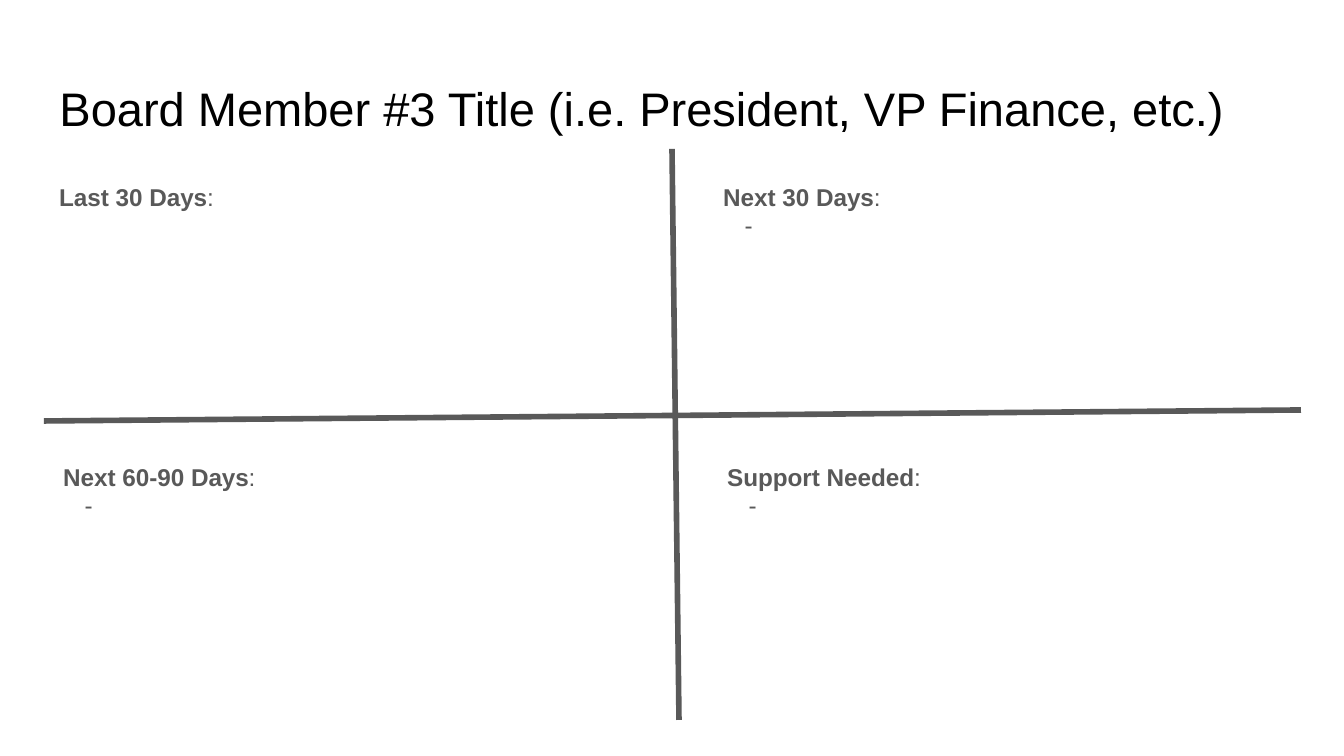
from lxml import etree
from pptx import Presentation
from pptx import util as u
from pptx.dml.color import RGBColor
from pptx.enum import shapes, text
from pptx.oxml.ns import qn

BLACK = RGBColor(0x00, 0x00, 0x00)
GREY = RGBColor(0x59, 0x59, 0x59)
FONT = "Arial"
EMU_PER_PX = 914400 / 134.4


def px(*lengths):
    return [u.Emu(round(length * EMU_PER_PX)) for length in lengths]


class Board:
    """Draws a quadrant report on one slide in a single style."""

    def __init__(self, deck):
        self.slide = deck.slides.add_slide(deck.slide_layouts[5])

    def frame(self, shape):
        frame = shape.text_frame
        frame.word_wrap = True
        frame.auto_size = text.MSO_AUTO_SIZE.NONE
        frame.vertical_anchor = text.MSO_ANCHOR.TOP
        frame.margin_left = frame.margin_right = u.Inches(0.1)
        frame.margin_top = frame.margin_bottom = u.Inches(0.1)
        return frame

    def run(self, paragraph, words, size, color, bold=False):
        run = paragraph.add_run()
        run.text = words
        run.font.name = FONT
        run.font.size = u.Pt(size)
        run.font.bold = bold
        run.font.color.rgb = color

    def title(self, words, *box):
        heading = self.slide.shapes.title
        heading.left, heading.top, heading.width, heading.height = px(*box)
        paragraph = self.frame(heading).paragraphs[0]
        paragraph.alignment = text.PP_ALIGN.LEFT
        self.run(paragraph, words, 25.2, BLACK)

    def dash(self, paragraph):
        properties = paragraph._p.get_or_add_pPr()
        properties.set("marL", str(u.Inches(0.5)))
        properties.set("indent", str(u.Inches(-0.34)))
        tint = etree.SubElement(properties, qn("a:buClr"))
        etree.SubElement(tint, qn("a:srgbClr"), val=str(GREY))
        etree.SubElement(properties, qn("a:buFont"), typeface=FONT)
        etree.SubElement(properties, qn("a:buChar"), char="-")
        self.run(paragraph, " ", 13, GREY)

    def quadrant(self, heading, left, top, dashed):
        box = self.slide.shapes.add_textbox(*px(left, top, 587, 223))
        frame = self.frame(box)
        self.run(frame.paragraphs[0], heading, 13, GREY, bold=True)
        self.run(frame.paragraphs[0], ":", 13, GREY)
        if dashed:
            self.dash(frame.add_paragraph())

    def divider(self, *ends):
        divider = self.slide.shapes.add_connector(
            shapes.MSO_CONNECTOR.STRAIGHT, *px(*ends))
        divider.line.color.rgb = GREY
        divider.line.width = u.Pt(3)
        etree.SubElement(divider._element.spPr, qn("a:effectLst"))


def main():
    deck = Presentation()
    deck.slide_width, deck.slide_height = px(1344, 756)
    board = Board(deck)
    board.title("Board Member #3 Title (i.e. President, VP Finance, etc.)",
                46, 66, 1253, 85)
    board.quadrant("Last 30 Days", 46, 169, dashed=False)
    board.quadrant("Next 30 Days", 710, 169, dashed=True)
    board.divider(672, 149, 679, 720)
    board.divider(1301, 410, 44, 421)
    board.quadrant("Next 60-90 Days", 50, 449, dashed=True)
    board.quadrant("Support Needed", 714, 449, dashed=True)
    deck.save("out.pptx")


if __name__ == "__main__":
    main()
